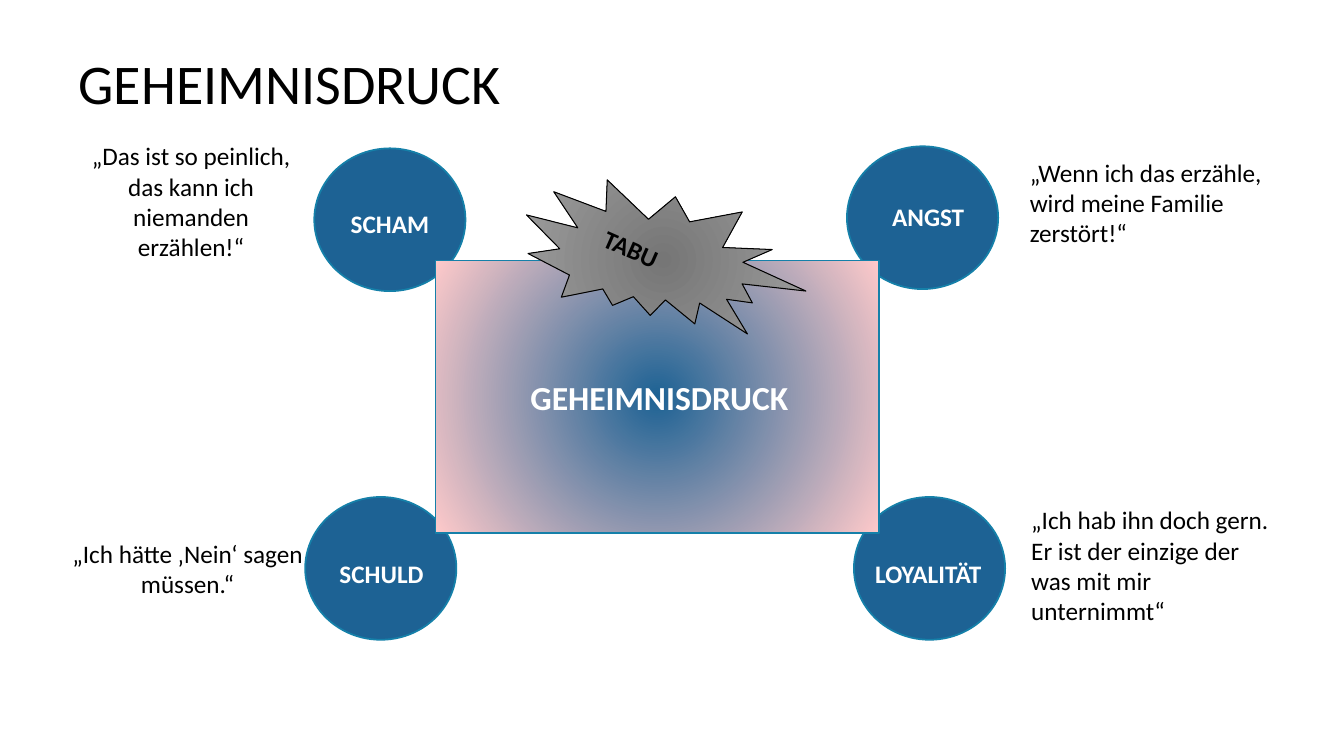
"""Build the GEHEIMNISDRUCK slide: a pressure box with four burdens, their quotes and a taboo burst."""
from dataclasses import dataclass
from typing import Any

from lxml.etree import SubElement
from pptx import Presentation
from pptx.dml.color import RGBColor as Rgb
from pptx.enum.shapes import MSO_SHAPE as Preset
from pptx.enum.text import MSO_ANCHOR as Anchor, MSO_AUTO_SIZE as AutoSize, PP_ALIGN as Align
from pptx.oxml.ns import qn
from pptx.util import Pt


@dataclass(frozen=True)
class Theme:
    font: str = "Calibri"
    title: float = 40
    centre: float = 24
    body: float = 18
    black: str = "000000"
    white: str = "FFFFFF"
    blue: str = "1D6294"
    edge: str = "1580A9"
    rose: str = "FFCACA"
    grey: str = "767676"
    silver: str = "A9A9A9"


@dataclass(frozen=True)
class Box:
    left: float
    top: float
    width: float
    height: float

    def lengths(self) -> list[Pt]:
        return [Pt(v) for v in (self.left, self.top, self.width, self.height)]


@dataclass(frozen=True)
class Burden:
    name: str
    circle_left: float
    circle_top: float
    label: Box
    quote: str
    quote_box: Box
    quote_align: Align


THEME = Theme()
CIRCLE_WIDTH, CIRCLE_HEIGHT = 108, 102
BURDENS = [
    Burden("ANGST", 605, 104.5, Box(620.5, 140, 85, 29),
           "„Wenn ich das erzähle, wird meine Familie zerstört!“",
           Box(728.5, 108.5, 194, 73), Align.LEFT),
    Burden("SCHULD", 218, 355, Box(230, 395, 85, 29),
           "„Ich hätte ‚Nein‘ sagen müssen.“",
           Box(37.5, 381, 193, 51), Align.CENTER),
    Burden("SCHAM", 224.5, 106, Box(236, 145, 85, 29),
           "„Das ist so peinlich, das kann ich niemanden erzählen!“",
           Box(49, 97, 175, 94), Align.CENTER),
    Burden("LOYALITÄT", 610, 355, Box(604, 395, 118, 29),
           "„Ich hab ihn doch gern. Er ist der einzige der was mit mir unternimmt“",
           Box(729.5, 357, 193, 94), Align.LEFT),
]


def apply(target: Any, formats: dict[str, Any]) -> None:
    for attribute, value in formats.items():
        setattr(target, attribute, value)


def write(shape: Any, text: str, size: float, color: str, bold: bool = False,
          align: Align = Align.LEFT, anchor: Anchor = Anchor.TOP) -> None:
    frame = shape.text_frame
    frame.text = text
    apply(frame, {"word_wrap": True, "auto_size": AutoSize.NONE, "vertical_anchor": anchor})
    paragraph = frame.paragraphs[0]
    paragraph.alignment = align
    font = paragraph.runs[0].font
    apply(font, {"name": THEME.font, "size": Pt(size), "bold": bold})
    font.color.rgb = Rgb.from_string(color)


def add_text(slide: Any, box: Box, text: str, size: float, color: str,
             bold: bool, align: Align) -> None:
    write(slide.shapes.add_textbox(*box.lengths()), text, size, color, bold, align)


def add_figure(slide: Any, preset: Preset, box: Box, fills: list[str],
               edge: str, weight: float) -> Any:
    figure = slide.shapes.add_shape(preset, *box.lengths())
    figure.shadow.inherit = False
    figure.line.color.rgb = Rgb.from_string(edge)
    figure.line.width = Pt(weight)
    if len(fills) == 1:
        figure.fill.solid()
        figure.fill.fore_color.rgb = Rgb.from_string(fills[0])
    else:
        fill_radially(figure, fills)
    return figure


def fill_radially(figure: Any, colors: list[str]) -> None:
    figure.fill.gradient()
    for stop, color, position in zip(figure.fill.gradient_stops, colors, (0, 1)):
        stop.color.rgb = Rgb.from_string(color)
        stop.position = position
    gradient = figure.element.spPr.find(qn("a:gradFill"))
    gradient.remove(gradient.find(qn("a:lin")))
    radial = SubElement(gradient, qn("a:path"), {"path": "circle"})
    SubElement(radial, qn("a:fillToRect"), {side: "50000" for side in "ltrb"})


def main() -> None:
    deck = Presentation()
    apply(deck, {"slide_width": Pt(960), "slide_height": Pt(540)})
    slide = deck.slides.add_slide(deck.slide_layouts[5])

    title = slide.shapes.title
    apply(title, dict(zip(("left", "top", "width", "height"), Box(49, 31, 856, 55.5).lengths())))
    write(title, "GEHEIMNISDRUCK", THEME.title, THEME.black)

    for burden in BURDENS:
        circle = Box(burden.circle_left, burden.circle_top, CIRCLE_WIDTH, CIRCLE_HEIGHT)
        add_figure(slide, Preset.OVAL, circle, [THEME.blue], THEME.edge, 1.25)

    add_figure(slide, Preset.RECTANGLE, Box(311, 186, 317, 195),
               [THEME.blue, THEME.rose], THEME.edge, 1.25)
    add_text(slide, Box(358.5, 265.5, 225, 36), "GEHEIMNISDRUCK",
             THEME.centre, THEME.white, True, Align.CENTER)

    for burden in BURDENS:
        add_text(slide, burden.label, burden.name, THEME.body, THEME.white, True, Align.CENTER)
        add_text(slide, burden.quote_box, burden.quote, THEME.body, THEME.black,
                 False, burden.quote_align)

    taboo = add_figure(slide, Preset.EXPLOSION2, Box(371.5, 131.5, 204.5, 108),
                       [THEME.grey, THEME.silver], THEME.black, 0.75)
    taboo.rotation = 23.9
    write(taboo, "TABU", THEME.body, THEME.black, True, anchor=Anchor.MIDDLE)

    deck.save("out.pptx")


if __name__ == "__main__":
    main()
